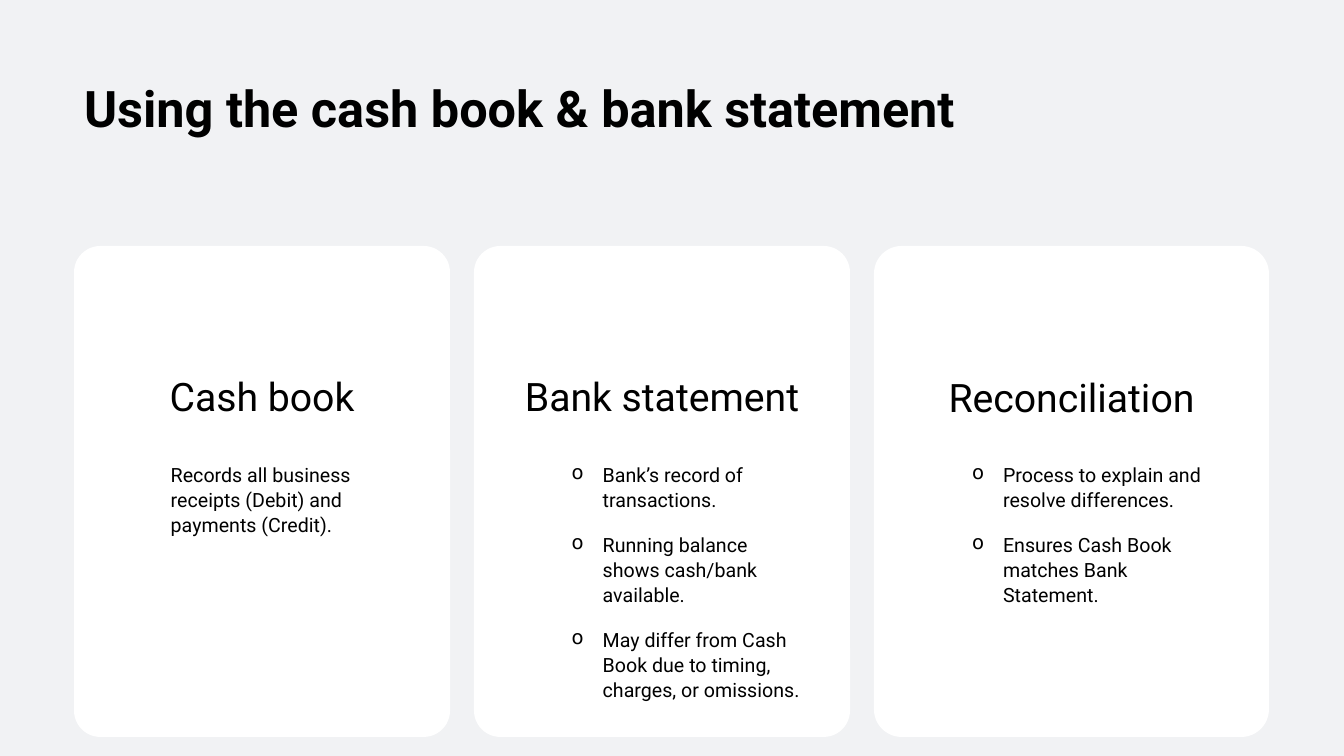
from pptx import Presentation
from pptx.dml.color import RGBColor
from pptx.enum.shapes import MSO_SHAPE
from pptx.enum.text import MSO_ANCHOR, MSO_AUTO_SIZE, PP_ALIGN
from pptx.oxml.ns import qn
from pptx.util import Pt

COLOURS = {"page": "F1F2F4", "card": "FFFFFF", "text": "000000"}
BODY_SPACING = {"line_spacing": 1.07, "space_before": Pt(6), "space_after": Pt(8)}
HEADING_SPACING = {"alignment": PP_ALIGN.CENTER, "space_after": Pt(23.5)}
CARD_GAP = 24
CARDS = [
    ("Cash book", 376, False,
     ["Records all business receipts (Debit) and payments (Credit)."]),
    ("Bank statement", 376, True,
     ["Bank’s record of transactions.",
      "Running balance shows cash/bank available.",
      "May differ from Cash Book due to timing, charges, or omissions."]),
    ("Reconciliation", 395, True,
     ["Process to explain and resolve differences.",
      "Ensures Cash Book matches Bank Statement."]),
]


def apply(target, values):
    for name, value in values.items():
        setattr(target, name, value)


class SlideBuilder:
    font = "Roboto"

    def __init__(self, deck):
        self.scale = deck.slide_width / 1344
        self.page = deck.slides.add_slide(deck.slide_layouts[5])
        self.fill(self.page.background, "page")

    def px(self, length):
        return round(length * self.scale)

    def fill(self, target, colour):
        target.fill.solid()
        target.fill.fore_color.rgb = RGBColor.from_string(COLOURS[colour])

    def add_text(self, para, text, size, bold, spacing):
        apply(para, spacing)
        span = para.add_run()
        span.text = text
        apply(span.font, {"name": self.font, "size": Pt(size), "bold": bold})
        span.font.color.rgb = RGBColor.from_string(COLOURS["text"])

    def indent(self, para, left, hanging, bullet=None):
        properties = para._p.get_or_add_pPr()
        properties.set("marL", str(self.px(left)))
        properties.set("indent", str(-self.px(hanging)))
        if bullet:
            mark = properties.makeelement(qn("a:buChar"), {"char": bullet})
            properties.append(mark)

    def title(self, text, left, top, width, height):
        box = self.page.shapes.title
        apply(box, {"left": self.px(left), "top": self.px(top),
                    "width": self.px(width), "height": self.px(height)})
        apply(box.text_frame, {"vertical_anchor": MSO_ANCHOR.TOP, "word_wrap": True,
                               "auto_size": MSO_AUTO_SIZE.SHAPE_TO_FIT_TEXT})
        self.add_text(box.text_frame.paragraphs[0], text, 36, True,
                      {**BODY_SPACING, "alignment": PP_ALIGN.LEFT})

    def card(self, heading, points, bulleted, left, top, width, height):
        box = self.page.shapes.add_shape(
            MSO_SHAPE.ROUNDED_RECTANGLE,
            *(self.px(length) for length in (left, top, width, height)))
        box.adjustments[0] = 0.07
        box.shadow.inherit = False
        box.line.fill.background()
        self.fill(box, "card")
        frame = box.text_frame
        apply(frame, {"margin_left": self.px(39), "margin_top": self.px(119),
                      "margin_right": self.px(39), "margin_bottom": self.px(59),
                      "vertical_anchor": MSO_ANCHOR.TOP, "word_wrap": True})
        self.add_text(frame.paragraphs[0], heading, 28, False, HEADING_SPACING)
        for point in points:
            para = frame.add_paragraph()
            self.add_text(para, point, 14, False,
                          {**BODY_SPACING, "level": 1, "alignment": PP_ALIGN.LEFT})
            if bulleted:
                self.indent(para, 82, 31, "o")
            else:
                self.indent(para, 50, 0)


def main():
    deck = Presentation()
    apply(deck, {"slide_width": 12192000, "slide_height": 6858000})
    builder = SlideBuilder(deck)
    builder.title("Using the cash book & bank statement", 74, 68, 1099, 71)
    left = 74
    for heading, width, bulleted, points in CARDS:
        builder.card(heading, points, bulleted, left, 246, width, 491)
        left += width + CARD_GAP
    deck.save("out.pptx")


if __name__ == "__main__":
    main()
